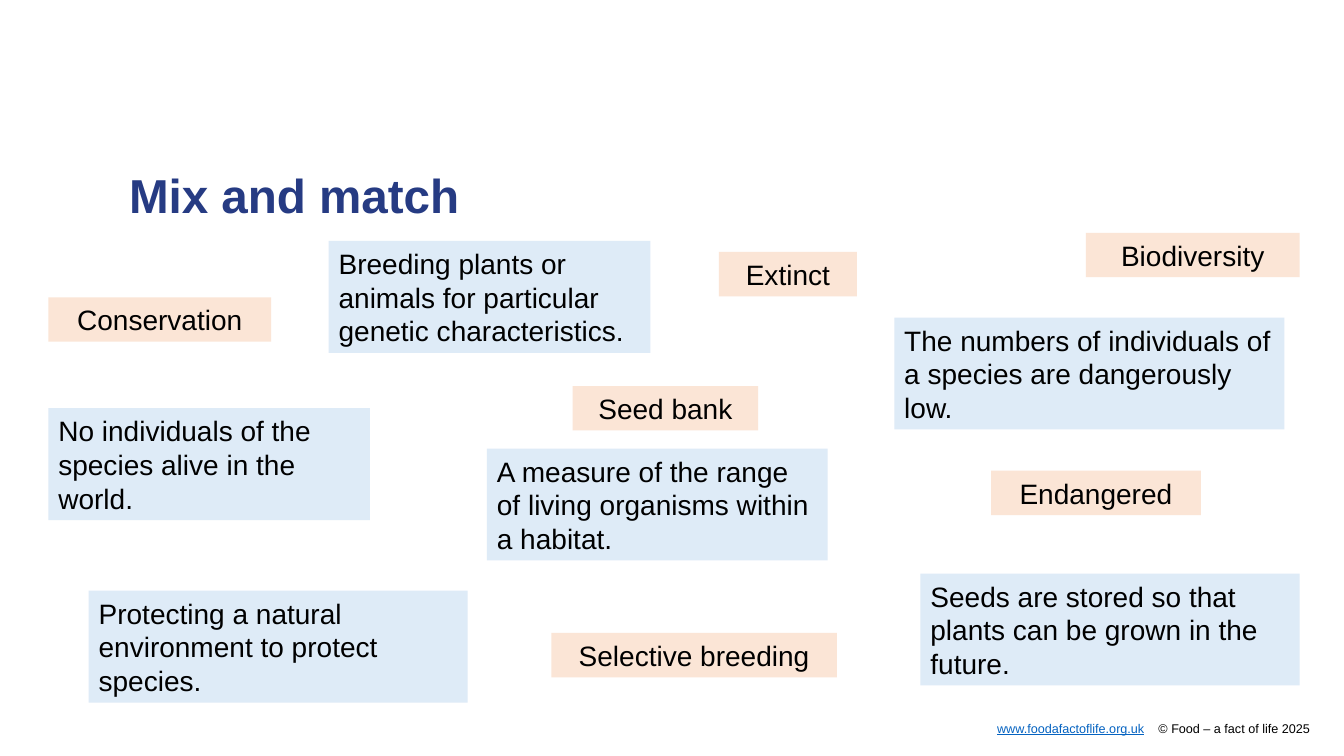
from pptx import Presentation
from pptx.dml.color import RGBColor
from pptx.enum.shapes import MSO_SHAPE
from pptx.enum.text import MSO_ANCHOR, PP_ALIGN
from pptx.oxml import parse_xml
from pptx.oxml.ns import nsdecls
from pptx.util import Inches, Pt

RECT = MSO_SHAPE.RECTANGLE
TOP, MIDDLE = MSO_ANCHOR.TOP, MSO_ANCHOR.MIDDLE
LEFT, CENTER = PP_ALIGN.LEFT, PP_ALIGN.CENTER


def rgb(code):
    return RGBColor.from_string(code)


def style(font, size, color):
    font.name = "Arial"
    font.size = Pt(size)
    font.color.rgb = rgb(color)


deck = Presentation()
deck.slide_width, deck.slide_height = Inches(13.33), Inches(7.5)
slide = deck.slides.add_slide(deck.slide_layouts[5])

# Title
title = slide.shapes.title
title.left, title.top = Inches(1.28), Inches(1.71)
title.width, title.height = Inches(10.63), Inches(0.79)
frame = title.text_frame
frame.margin_left = frame.margin_right = 0
frame.margin_top = frame.margin_bottom = 0
frame.vertical_anchor = TOP
frame.text = "Mix and match"
para = frame.paragraphs[0]
para.alignment = LEFT
para.line_spacing = 0.9
style(para.font, 34, "263B83")
para.font.bold = True

# Footer: link, then copyright at a tab stop
foot = slide.shapes.add_textbox(
    Inches(9.89), Inches(7.15), Inches(3.2), Inches(0.15))
frame = foot.text_frame
frame.word_wrap = True
frame.margin_left = frame.margin_right = 0
frame.margin_top = frame.margin_bottom = 0
para = frame.paragraphs[0]
stop = Inches(1.6)
para._p.get_or_add_pPr().append(parse_xml(
    f'<a:tabLst {nsdecls("a")}><a:tab pos="{stop}" algn="l"/></a:tabLst>'))
link = para.add_run()
link.text = "www.foodafactoflife.org.uk"
style(link.font, 9, "0563C1")
link.font.underline = True
owner = para.add_run()
owner.text = "\t© Food – a fact of life 2025"
style(owner.font, 9, "000000")

# Cards: left, top, width, text
terms = [
    (7.13, 2.5, 1.37, "Extinct"),
    (0.48, 2.95, 2.21, "Conservation"),
    (9.83, 4.67, 2.08, "Endangered"),
    (5.68, 3.83, 1.84, "Seed bank"),
    (10.77, 2.31, 2.12, "Biodiversity"),
    (5.47, 6.28, 2.83, "Selective breeding"),
]
meanings = [
    (0.48, 4.05, 3.19, "No individuals of the species alive in the world."),
    (8.87, 3.15, 3.87,
     "The numbers of individuals of a species are dangerously low."),
    (9.13, 5.69, 3.76,
     "Seeds are stored so that plants can be grown in the future."),
    (0.88, 5.86, 3.76,
     "Protecting a natural environment to protect species."),
    (4.83, 4.45, 3.38,
     "A measure of the range of living organisms within a habitat."),
    (3.26, 2.39, 3.19,
     "Breeding plants or animals for particular genetic characteristics."),
]
groups = [
    (terms, 0.44, "FBE5D6", CENTER),
    (meanings, 1.11, "DEEBF7", LEFT),
]
for cards, height, fill, align in groups:
    for left, top, width, text in cards:
        card = slide.shapes.add_shape(
            RECT, Inches(left), Inches(top), Inches(width), Inches(height))
        card.shadow.inherit = False
        card.fill.solid()
        card.fill.fore_color.rgb = rgb(fill)
        card.line.fill.background()
        frame = card.text_frame
        frame.word_wrap = True
        frame.vertical_anchor = MIDDLE
        frame.text = text
        para = frame.paragraphs[0]
        para.alignment = align
        style(para.font, 20, "000000")

deck.save("out.pptx")
